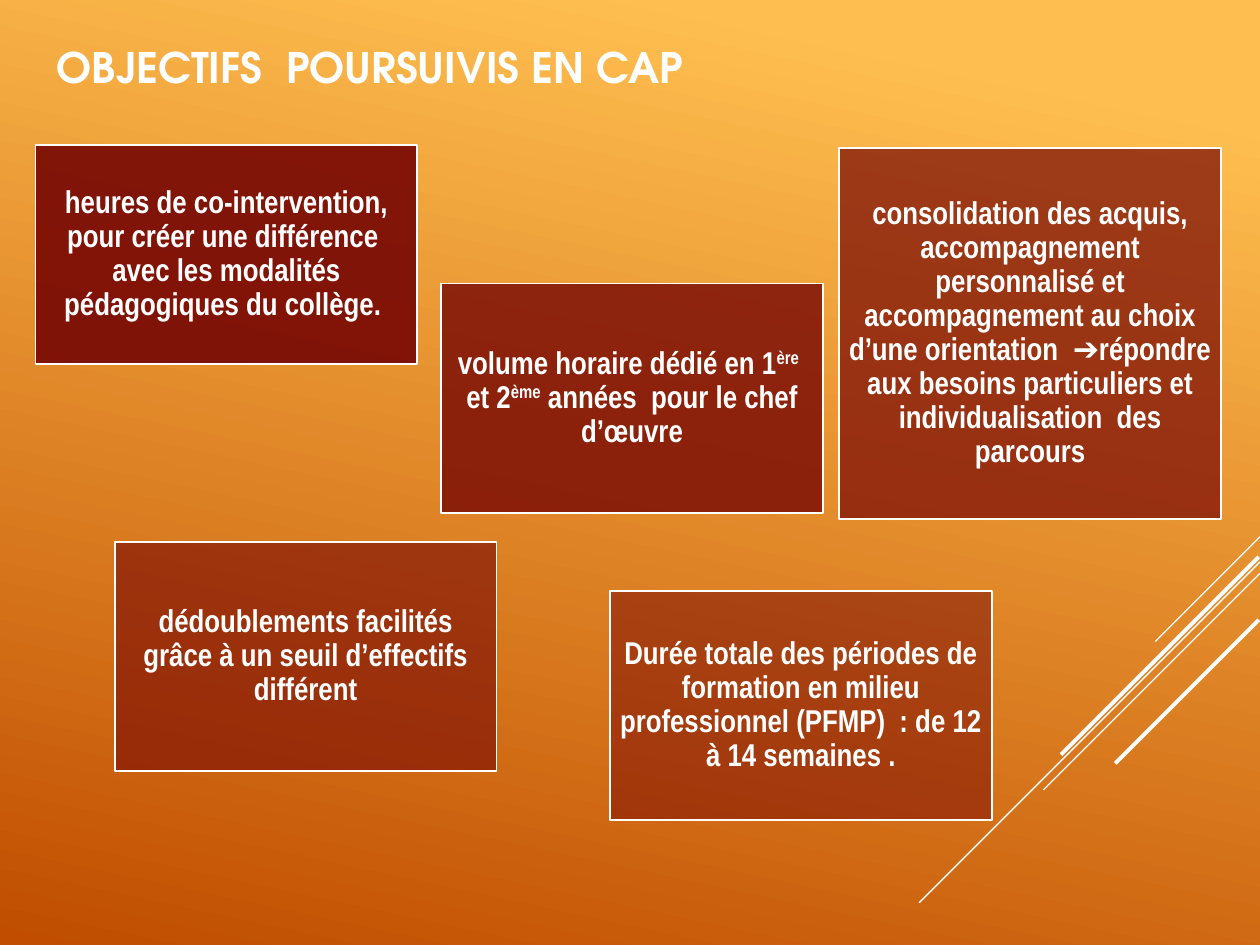
from lxml import etree
from pptx import Presentation
from pptx.dml.color import RGBColor
from pptx.enum import shapes, text
from pptx.oxml import ns
from pptx.util import Pt

COLOURS = {"white": "FFFFFF", "card": "760603", "sky": "FFBF50", "ground": "C04D00"}
CARD_WIDTH, CARD_INSET = 218.3, 5

# Left, top, height, opacity in percent, runs (every second run is superscript)
CARDS = [
    (20.2, 82.8, 125.3, 90, ["heures de co-intervention, pour créer une différence  avec "
                             "les modalités pédagogiques du collège. "]),
    (252, 162, 131, 80, ["volume horaire dédié en 1", "ère", "  et 2", "ème",
                         " années  pour le chef d’œuvre"]),
    (479.5, 84.4, 212.4, 70, ["consolidation des acquis, accompagnement personnalisé et "
                              "accompagnement au choix d’une orientation  ➔répondre aux besoins "
                              "particuliers et individualisation  des parcours"]),
    (65.5, 309.6, 131, 60, ["dédoublements facilités grâce à un seuil d’effectifs différent"]),
    (348.5, 337.7, 131, 50, ["Durée totale des périodes de formation en milieu professionnel "
                             "(PFMP)  : de 12 à 14 semaines ."]),
]

# Right end x, right end y, run of the 45° line, width
STREAKS = [
    (720, 306.7, 59.8, 0.75),
    (720, 321.1, 194.8, 0.75),
    (720, 327.6, 123.8, 0.75),
    (719.3, 318.2, 113, 2.25),
    (719.3, 354.2, 82, 2.25),
]


def colour(name):
    return RGBColor.from_string(COLOURS[name])


def apply(target, values):
    for name, value in values.items():
        setattr(target, name, value)


def paint_background(page):
    fill = page.background.fill
    fill.gradient()
    fill.gradient_angle = 258
    for stop, (name, position) in zip(fill.gradient_stops, [("sky", 0.1), ("ground", 1)]):
        stop.color.rgb = colour(name)
        stop.position = position


def add_span(para, words, font, size):
    span = para.add_run()
    span.text = words
    apply(span.font, {"name": font, "size": Pt(size), "bold": True})
    span.font.color.rgb = colour("white")
    return span


def add_title(page, words):
    title = page.shapes.title
    apply(title, {"left": Pt(25.2), "top": Pt(9.4), "width": Pt(516.2), "height": Pt(56.9)})
    apply(title.text_frame, {"vertical_anchor": text.MSO_ANCHOR.MIDDLE, "word_wrap": True})
    para = title.text_frame.paragraphs[0]
    para.alignment = text.PP_ALIGN.LEFT
    add_span(para, words, "TeX Gyre Adventor", 24)


def add_streak(page, right, top, run, width):
    streak = page.shapes.add_connector(
        shapes.MSO_CONNECTOR.STRAIGHT, Pt(right), Pt(top), Pt(right - run), Pt(top + run))
    streak.line.color.rgb = colour("white")
    streak.line.width = Pt(width)
    etree.SubElement(streak._element.spPr, ns.qn("a:effectLst"))


def add_card(page, left, top, height, opacity, runs):
    box = page.shapes.add_shape(
        shapes.MSO_SHAPE.RECTANGLE, Pt(left), Pt(top), Pt(CARD_WIDTH), Pt(height))
    box.shadow.inherit = False
    box.fill.solid()
    box.fill.fore_color.rgb = colour("card")
    tint = box._element.spPr.find(ns.qn("a:solidFill"))[0]
    etree.SubElement(tint, ns.qn("a:alpha"), val=str(opacity * 1000))
    box.line.color.rgb = colour("white")
    box.line.width = Pt(1)

    frame = box.text_frame
    apply(frame, {"word_wrap": True, "vertical_anchor": text.MSO_ANCHOR.MIDDLE})
    apply(frame, {f"margin_{side}": Pt(CARD_INSET)
                  for side in ("left", "top", "right", "bottom")})
    para = frame.paragraphs[0]
    apply(para, {"alignment": text.PP_ALIGN.CENTER, "line_spacing": 0.9})
    for index, words in enumerate(runs):
        span = add_span(para, words, "Arial Narrow", 18)
        if index % 2:
            span.font._element.set("baseline", "30000")


def main():
    deck = Presentation()
    apply(deck, {"slide_width": Pt(720), "slide_height": Pt(540)})
    page = deck.slides.add_slide(deck.slide_layouts[5])
    paint_background(page)
    # Diagonal streaks lie behind the cards
    for streak in STREAKS:
        add_streak(page, *streak)
    add_title(page, "OBJECTIFS  POURSUIVIS EN CAP")
    for card in CARDS:
        add_card(page, *card)
    deck.save("out.pptx")


if __name__ == "__main__":
    main()
